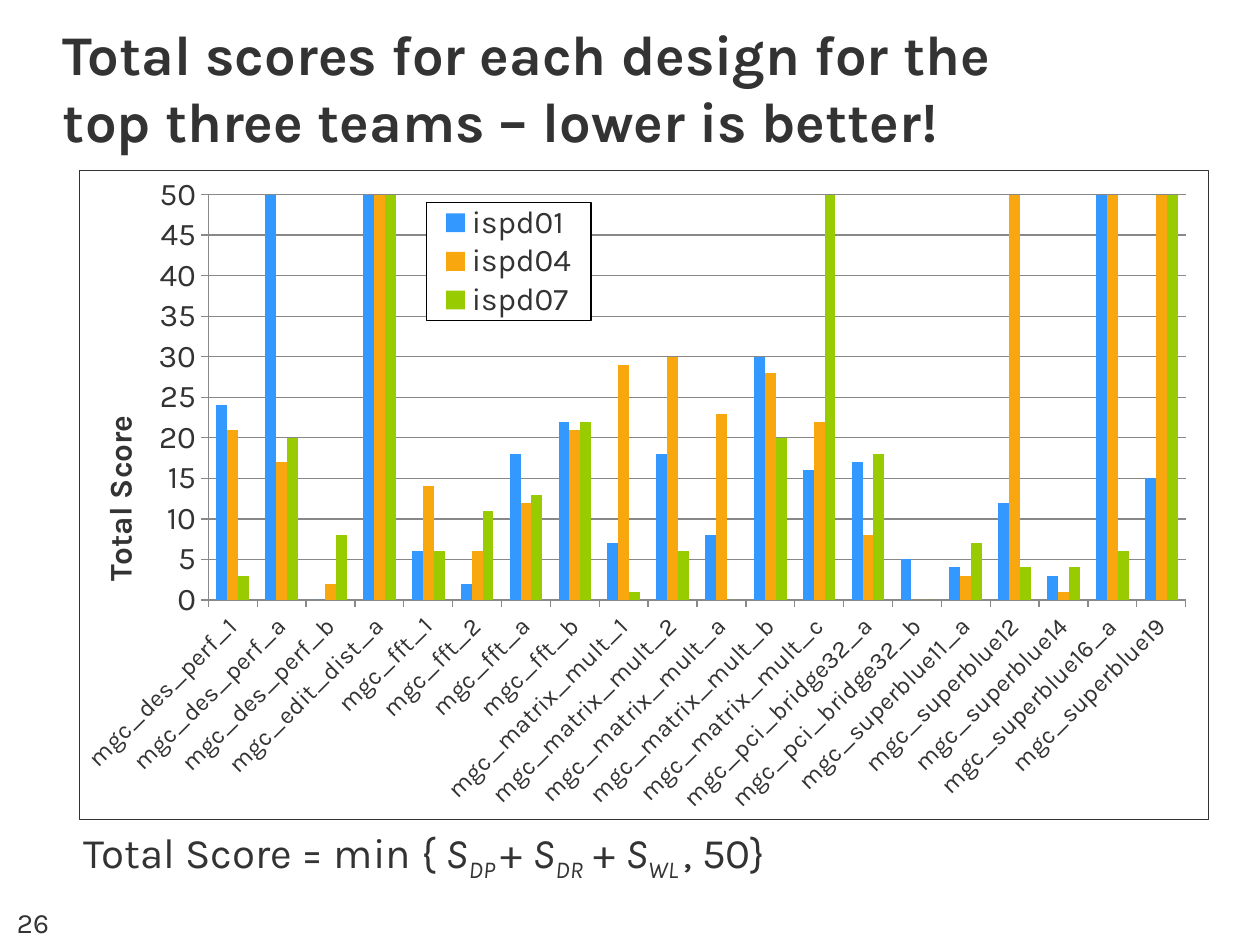
from dataclasses import dataclass

from lxml.etree import _Element as Element
from pptx import Presentation
from pptx.chart.data import CategoryChartData
from pptx.dml.color import RGBColor
from pptx.enum.chart import XL_CHART_TYPE as ChartType, XL_LEGEND_POSITION as LegendPos
from pptx.enum.chart import XL_TICK_MARK as TickMark
from pptx.enum.text import MSO_ANCHOR as Anchor, PP_ALIGN as Align
from pptx.oxml import parse_xml
from pptx.oxml.ns import nsdecls, qn
from pptx.util import Emu, Pt

PX_PER_INCH = 126
FONT = "Karla"
INK = "333333"
GRID = "888888"


@dataclass(frozen=True)
class Box:
    left: int
    top: int
    width: int
    height: int

    def emu(self) -> tuple:
        return tuple(map(px, (self.left, self.top, self.width, self.height)))


@dataclass(frozen=True)
class Team:
    name: str
    color: str
    scores: tuple


@dataclass(frozen=True)
class Piece:
    text: str
    italic: bool = False
    subscript: bool = False


DESIGNS = (
    "mgc_des_perf_1", "mgc_des_perf_a", "mgc_des_perf_b", "mgc_edit_dist_a",
    "mgc_fft_1", "mgc_fft_2", "mgc_fft_a", "mgc_fft_b",
    "mgc_matrix_mult_1", "mgc_matrix_mult_2", "mgc_matrix_mult_a",
    "mgc_matrix_mult_b", "mgc_matrix_mult_c",
    "mgc_pci_bridge32_a", "mgc_pci_bridge32_b", "mgc_superblue11_a",
    "mgc_superblue12", "mgc_superblue14", "mgc_superblue16_a", "mgc_superblue19",
)
TEAMS = (
    Team("ispd01", "3398FF",
         (24, 50, 0, 50, 6, 2, 18, 22, 7, 18, 8, 30, 16, 17, 5, 4, 12, 3, 50, 15)),
    Team("ispd04", "F9A70F",
         (21, 17, 2, 50, 14, 6, 12, 21, 29, 30, 23, 28, 22, 8, 0, 3, 50, 1, 50, 50)),
    Team("ispd07", "99CC00",
         (3, 20, 8, 50, 6, 11, 13, 22, 1, 6, 0, 20, 50, 18, 0, 7, 4, 4, 6, 50)),
)
FORMULA = (
    Piece("Total Score = min { "),
    Piece("S", italic=True), Piece("DP ", italic=True, subscript=True), Piece("+ "),
    Piece("S", italic=True), Piece("DR", italic=True, subscript=True), Piece(" + "),
    Piece("S", italic=True), Piece("WL ", italic=True, subscript=True), Piece(", 50}"),
)
CHART_BOX = Box(79, 170, 1130, 650)
PLOT_BOX = Box(208, 194, 979, 406)
LEGEND_BOX = Box(426, 202, 165, 118)


def px(length: int) -> Emu:
    return Emu(round(length * 914400 / PX_PER_INCH))


def rgb(color: str) -> RGBColor:
    return RGBColor.from_string(color)


def style(font, size: int, bold: bool = False) -> None:
    font.name, font.size, font.bold = FONT, Pt(size), bold
    font.color.rgb = rgb(INK)


def add_text(slide, box: Box, pieces: tuple, size: int, bold: bool = False,
             wrap: bool = True, anchor=Anchor.TOP, align=Align.LEFT, inset: int = 13) -> None:
    frame = slide.shapes.add_textbox(*box.emu()).text_frame
    frame.word_wrap, frame.vertical_anchor = wrap, anchor
    frame.margin_left = frame.margin_right = px(inset)
    paragraph = frame.paragraphs[0]
    paragraph.text = "".join(piece.text for piece in pieces) if len(pieces) == 1 else ""
    paragraph.alignment = align
    if len(pieces) > 1:
        for piece in pieces:
            run = paragraph.add_run()
            run.text = piece.text
            run.font.italic = piece.italic
            if piece.subscript:
                run._r.get_or_add_rPr().set("baseline", "-25000")
    for run in paragraph.runs:
        style(run.font, size, bold)


def place(part: Element, box: Box, index: int, sized: bool = True, inner: bool = False) -> None:
    for old in part.findall(qn("c:layout")):
        part.remove(old)
    values = {
        "x": (box.left - CHART_BOX.left) / CHART_BOX.width,
        "y": (box.top - CHART_BOX.top) / CHART_BOX.height,
    }
    if sized:
        values["w"] = box.width / CHART_BOX.width
        values["h"] = box.height / CHART_BOX.height
    target = '<c:layoutTarget val="inner"/>' if inner else ""
    modes = '<c:xMode val="edge"/><c:yMode val="edge"/>'
    numbers = "".join(f'<c:{key} val="{value:.3f}"/>' for key, value in values.items())
    part.insert(index, parse_xml(
        f'<c:layout {nsdecls("c")}><c:manualLayout>{target}{modes}{numbers}'
        "</c:manualLayout></c:layout>"))


def frame_after(sibling: Element, line: str) -> None:
    sibling.addnext(parse_xml(
        f'<c:spPr {nsdecls("c", "a")}><a:solidFill><a:srgbClr val="FFFFFF"/></a:solidFill>'
        f'<a:ln w="9525"><a:solidFill><a:srgbClr val="{line}"/></a:solidFill></a:ln></c:spPr>'))


def add_score_chart(slide) -> None:
    scores = CategoryChartData(number_format="0")
    scores.categories = DESIGNS
    for team in TEAMS:
        scores.add_series(team.name, team.scores)
    chart = slide.shapes.add_chart(
        ChartType.COLUMN_CLUSTERED, *CHART_BOX.emu(), scores).chart
    style(chart.font, 18)
    chart.has_title = False
    space = chart._chartSpace
    frame_after(space.find(qn("c:chart")), INK)
    place(space.chart.plotArea, PLOT_BOX, 0, inner=True)

    plot = chart.plots[0]
    plot.gap_width, plot.overlap, plot.vary_by_categories = 150, 0, False
    for series, team in zip(plot.series, TEAMS):
        series.invert_if_negative = False
        series.format.fill.solid()
        series.format.fill.fore_color.rgb = rgb(team.color)

    designs, totals = chart.category_axis, chart.value_axis
    for axis, size in ((designs, 14), (totals, 18)):
        axis.major_tick_mark, axis.minor_tick_mark = TickMark.OUTSIDE, TickMark.NONE
        axis.format.line.color.rgb = rgb(GRID)
        style(axis.tick_labels.font, size)
    designs._element.find(qn("c:txPr")).find(qn("a:bodyPr")).set("rot", "-2700000")
    totals.minimum_scale, totals.maximum_scale, totals.major_unit = 0, 50, 5
    totals.tick_labels.number_format = "0"
    totals.tick_labels.number_format_is_linked = False
    totals.has_major_gridlines = True
    totals.major_gridlines.format.line.color.rgb = rgb(GRID)
    totals.major_gridlines.format.line.width = Pt(0.75)

    caption = totals.axis_title
    caption.text_frame.text = "Total Score"
    style(caption.text_frame.paragraphs[0].runs[0].font, 18, bold=True)
    caption.text_frame._txBody.find(qn("a:bodyPr")).set("rot", "-5400000")
    place(caption._element, Box(93, 410, 0, 0), 1, sized=False)

    chart.has_legend = True
    legend = chart.legend
    legend.position, legend.include_in_layout = LegendPos.RIGHT, False
    style(legend.font, 18)
    key = legend._element
    place(key, LEGEND_BOX, 1)
    frame_after(key.find(qn("c:overlay")), "000000")


def main() -> None:
    deck = Presentation()
    deck.slide_width, deck.slide_height = px(1260), px(945)
    slide = deck.slides.add_slide(deck.slide_layouts[6])
    add_score_chart(slide)
    add_text(slide, Box(71, 820, 813, 63), FORMULA, 24, wrap=False)
    heading = Piece("Total scores for each design for the\vtop three teams – lower is better!")
    add_text(slide, Box(0, 13, 1260, 147), (heading,), 32, bold=True,
             anchor=Anchor.BOTTOM, inset=63)
    add_text(slide, Box(0, 913, 66, 32), (Piece("26"),), 16,
             anchor=Anchor.BOTTOM, align=Align.CENTER)
    deck.save("out.pptx")


if __name__ == "__main__":
    main()
